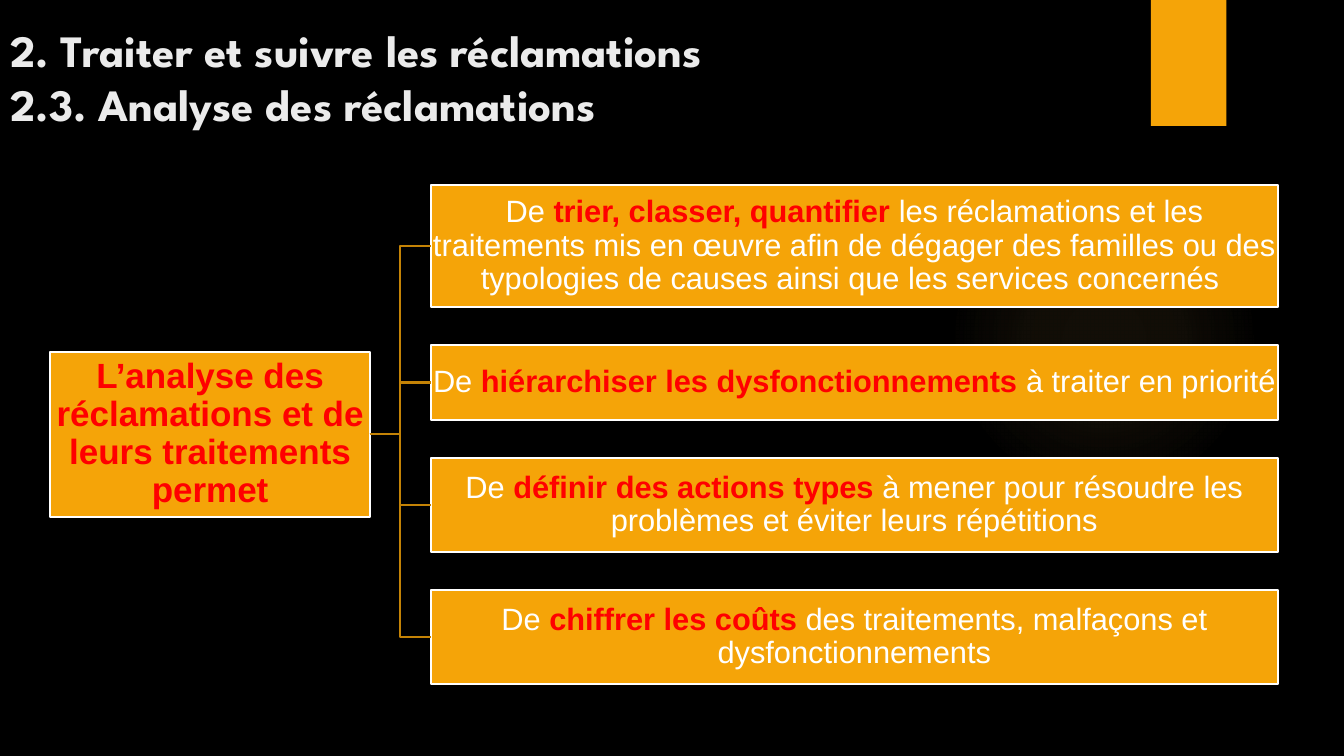
from dataclasses import dataclass

from lxml.etree import SubElement
from pptx import Presentation
from pptx.dml.color import RGBColor
from pptx.enum.shapes import MSO_CONNECTOR, MSO_SHAPE
from pptx.enum.text import MSO_ANCHOR, MSO_AUTO_SIZE, PP_ALIGN
from pptx.oxml import parse_xml
from pptx.oxml.ns import nsdecls, qn
from pptx.util import Inches, Pt


@dataclass(frozen=True)
class Theme:
    background: str = "000000"
    accent: str = "F5A408"
    glow: str = "FAC96A"
    link: str = "C48306"
    heading: str = "EBEBEB"
    light: str = "FFFFFF"
    emphasis: str = "FF0000"
    heading_font: str = "League Spartan"
    body_font: str = "Arial"
    heading_size: int = 32
    root_size: int = 25
    branch_size: int = 22
    line_width: float = 1.5


class Board:
    COLUMNS, ROWS = 16, 9

    def __init__(self, presentation, theme):
        self.theme = theme
        self.column = presentation.slide_width / self.COLUMNS
        self.row = presentation.slide_height / self.ROWS
        self.slide = presentation.slides.add_slide(presentation.slide_layouts[5])
        self.paint(self.slide.background.fill, theme.background)

    def paint(self, fill, color):
        fill.solid()
        fill.fore_color.rgb = RGBColor.from_string(color)

    def place(self, left, top, width, height):
        return (round(left * self.column), round(top * self.row),
                round(width * self.column), round(height * self.row))

    def style(self, run, font, size, color, bold):
        run.font.name = font
        run.font.size = Pt(size)
        run.font.bold = bold
        run.font.color.rgb = RGBColor.from_string(color)

    def title(self, text, *area):
        heading = self.slide.shapes.title
        heading.left, heading.top, heading.width, heading.height = self.place(*area)
        frame = heading.text_frame
        frame.text = text
        frame.word_wrap = True
        frame.auto_size = MSO_AUTO_SIZE.NONE
        frame.vertical_anchor = MSO_ANCHOR.BOTTOM
        frame.paragraphs[0].alignment = PP_ALIGN.LEFT
        for run in frame.paragraphs[0].runs:
            self.style(run, self.theme.heading_font, self.theme.heading_size,
                       self.theme.heading, True)

    def block(self, *area, kind=MSO_SHAPE.RECTANGLE):
        block = self.slide.shapes.add_shape(kind, *self.place(*area))
        block.shadow.inherit = False
        self.paint(block.fill, self.theme.accent)
        block.line.fill.background()
        return block

    def glow(self, stops, *area):
        halo = self.block(*area, kind=MSO_SHAPE.OVAL)
        gradient = parse_xml(
            f'<a:gradFill {nsdecls("a")}><a:gsLst/><a:path path="circle">'
            '<a:fillToRect l="50000" t="50000" r="50000" b="50000"/>'
            '</a:path></a:gradFill>')
        for position, opacity in stops:
            stop = SubElement(gradient[0], qn("a:gs"), pos=str(position * 1000))
            color = SubElement(stop, qn("a:srgbClr"), val=self.theme.glow)
            SubElement(color, qn("a:alpha"), val=str(opacity * 1000))
        solid = halo.element.spPr.find(qn("a:solidFill"))
        solid.getparent().replace(solid, gradient)

    def card(self, parts, size, *area):
        card = self.block(*area)
        self.paint(card.line.fill, self.theme.light)
        card.line.width = Pt(self.theme.line_width)
        frame = card.text_frame
        frame.word_wrap = True
        frame.vertical_anchor = MSO_ANCHOR.MIDDLE
        frame.margin_left = frame.margin_right = Inches(0.02)
        frame.margin_top = frame.margin_bottom = Inches(0.02)
        paragraph = frame.paragraphs[0]
        paragraph.alignment = PP_ALIGN.CENTER
        paragraph.line_spacing = 0.9
        for text, strong in parts:
            run = paragraph.add_run()
            run.text = text
            color = self.theme.emphasis if strong else self.theme.light
            self.style(run, self.theme.body_font, size, color, strong)
        return card

    def link(self, root, branch):
        link = self.slide.shapes.add_connector(MSO_CONNECTOR.ELBOW, 0, 0, 0, 0)
        link.begin_connect(root, 3)
        link.end_connect(branch, 1)
        self.paint(link.line.fill, self.theme.link)
        link.line.width = Pt(self.theme.line_width)
        SubElement(link.element.spPr, qn("a:effectLst"))


BENEFITS = [
    (1.46, "trier, classer, quantifier ",
     "les réclamations et les traitements mis en œuvre afin de dégager des familles "
     "ou des typologies de causes ainsi que les services concernés "),
    (0.89, "hiérarchiser les dysfonctionnements ", "à traiter en priorité "),
    (1.12, "définir des actions types ",
     "à mener pour résoudre les problèmes et éviter leurs répétitions"),
    (1.12, "chiffrer les coûts ", "des traitements, malfaçons et dysfonctionnements"),
]
BENEFIT_GAP = 0.45


def main():
    presentation = Presentation()
    presentation.slide_width = Inches(13.33)
    presentation.slide_height = Inches(7.5)
    theme = Theme()
    board = Board(presentation, theme)

    board.glow([(0, 7), (36, 6), (69, 0)], 11.29, 2.2, 3.7, 3.7)
    board.block(13.7, 0, 0.9, 1.5)
    board.title("2. Traiter et suivre les réclamations\v2.3. Analyse des réclamations",
                0, 0, 11.58, 1.61)

    analysis = board.card(
        [("L’analyse des réclamations et de leurs traitements permet", True)],
        theme.root_size, 0.6, 4.19, 3.8, 1.96)
    top = 2.2
    for height, action, purpose in BENEFITS:
        benefit = board.card([("De ", False), (action, True), (purpose, False)],
                             theme.branch_size, 5.13, top, 10.08, height)
        board.link(analysis, benefit)
        top += height + BENEFIT_GAP

    presentation.save("out.pptx")


if __name__ == "__main__":
    main()
